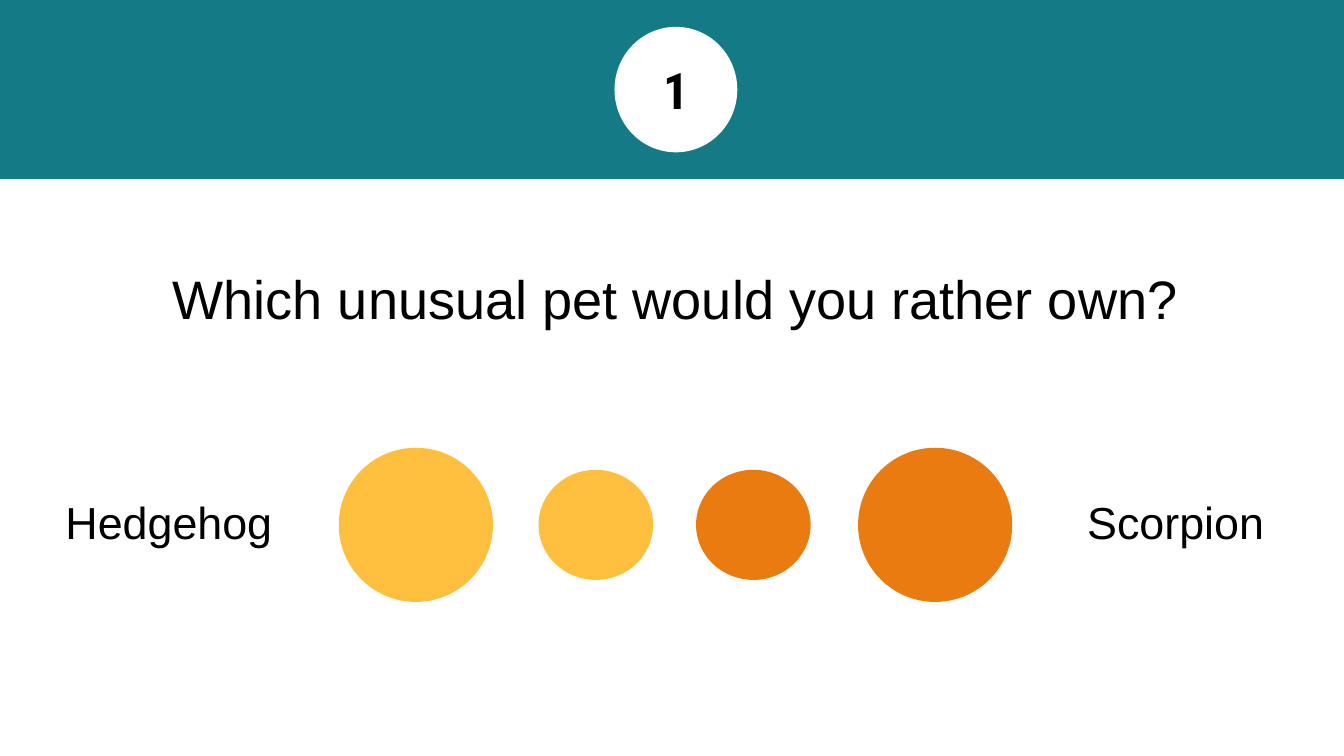
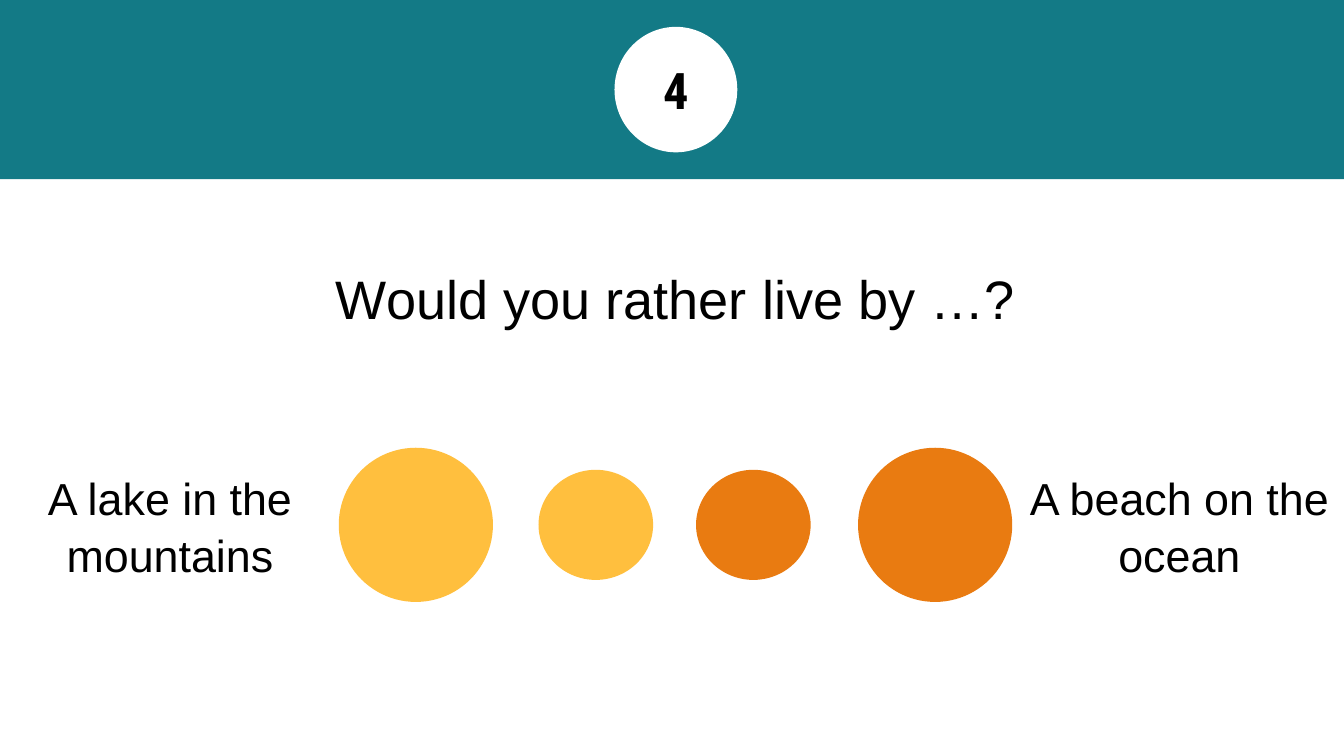
import dataclasses

import pptx
import pptx.dml.color
import pptx.enum.shapes
import pptx.enum.text
import pptx.util

Pt = pptx.util.Pt
SHAPE = pptx.enum.shapes.MSO_SHAPE
ANCHOR = pptx.enum.text.MSO_ANCHOR
TITLE_ONLY = 5


@dataclasses.dataclass(frozen=True)
class Theme:
    band: str = "137A86"
    paper: str = "FFFFFF"
    ink: str = "000000"
    first: str = "FFBF3E"
    second: str = "E97B11"
    body_font: str = "Arial"
    number_font: str = "Roboto Condensed"
    number_size: float = 27
    question_size: float = 29
    answer_size: float = 24
    inset: float = 7.2
    line_spacing: float = 1.05


THEME = Theme()

# Centre x, width, height and colour of each circle on the voting scale
SCALE_MIDDLE = 281.2
SCALE = [
    (222.8, 82.6, 82.6, THEME.first),
    (501, 82.6, 82.6, THEME.second),
    (319.2, 61.4, 59, THEME.first),
    (403.6, 61.4, 59, THEME.second),
]
ANSWER_WIDTH = 176.4

# Number, question, answers, left edges of the answers, height of the answers
QUESTIONS = [
    ("1", "Which unusual pet would you rather own?",
     ("Hedgehog", "Scorpion"), (2.2, 541.6), 49.8),
    ("4", "Would you rather live by …?",
     ("A lake in the mountains", "A beach on the ocean"), (2.8, 543.6), 74.8),
]


def rgb(colour):
    return pptx.dml.color.RGBColor.from_string(colour)


def write(shape, text, size, font=THEME.body_font, bold=False,
          anchor=ANCHOR.TOP, spacing=THEME.line_spacing):
    frame = shape.text_frame
    frame.text = text
    frame_format = {
        "word_wrap": True,
        "auto_size": pptx.enum.text.MSO_AUTO_SIZE.NONE,
        "vertical_anchor": anchor,
    }
    for side in ("left", "top", "right", "bottom"):
        frame_format[f"margin_{side}"] = Pt(THEME.inset)
    for name, value in frame_format.items():
        setattr(frame, name, value)
    paragraph = frame.paragraphs[0]
    paragraph.alignment = pptx.enum.text.PP_ALIGN.CENTER
    paragraph.line_spacing = spacing
    for name, value in {"name": font, "size": Pt(size), "bold": bold}.items():
        setattr(paragraph.font, name, value)
    paragraph.font.color.rgb = rgb(THEME.ink)


def add_plain_shape(slide, kind, box, colour):
    shape = slide.shapes.add_shape(kind, *map(Pt, box))
    shape.shadow.inherit = False
    shape.fill.solid()
    shape.fill.fore_color.rgb = rgb(colour)
    shape.line.fill.background()
    return shape


def add_header(slide, number):
    add_plain_shape(slide, SHAPE.RECTANGLE, (0, 0, 722, 96), THEME.band)
    badge = add_plain_shape(slide, SHAPE.OVAL, (329.2, 14.4, 65.8, 67.2), THEME.paper)
    write(badge, number, THEME.number_size, THEME.number_font, True, ANCHOR.MIDDLE, 1.0)


def set_question(slide, question):
    title = slide.shapes.title
    box = {"left": 26.6, "top": 133.2, "width": 671, "height": 49.8}
    for name, value in box.items():
        setattr(title, name, Pt(value))
    write(title, question, THEME.question_size)


def add_scale(slide):
    for centre, width, height, colour in SCALE:
        box = (centre - width / 2, SCALE_MIDDLE - height / 2, width, height)
        add_plain_shape(slide, SHAPE.OVAL, box, colour)


def add_answer(slide, answer, left, height):
    top = SCALE_MIDDLE - height / 2
    label = slide.shapes.add_textbox(*map(Pt, (left, top, ANSWER_WIDTH, height)))
    write(label, answer, THEME.answer_size)


def main():
    deck = pptx.Presentation()
    deck.slide_width, deck.slide_height = Pt(720), Pt(405)
    for number, question, answers, lefts, height in QUESTIONS:
        slide = deck.slides.add_slide(deck.slide_layouts[TITLE_ONLY])
        add_header(slide, number)
        set_question(slide, question)
        add_scale(slide)
        for answer, left in zip(answers, lefts):
            add_answer(slide, answer, left, height)
    deck.save("out.pptx")


if __name__ == "__main__":
    main()
